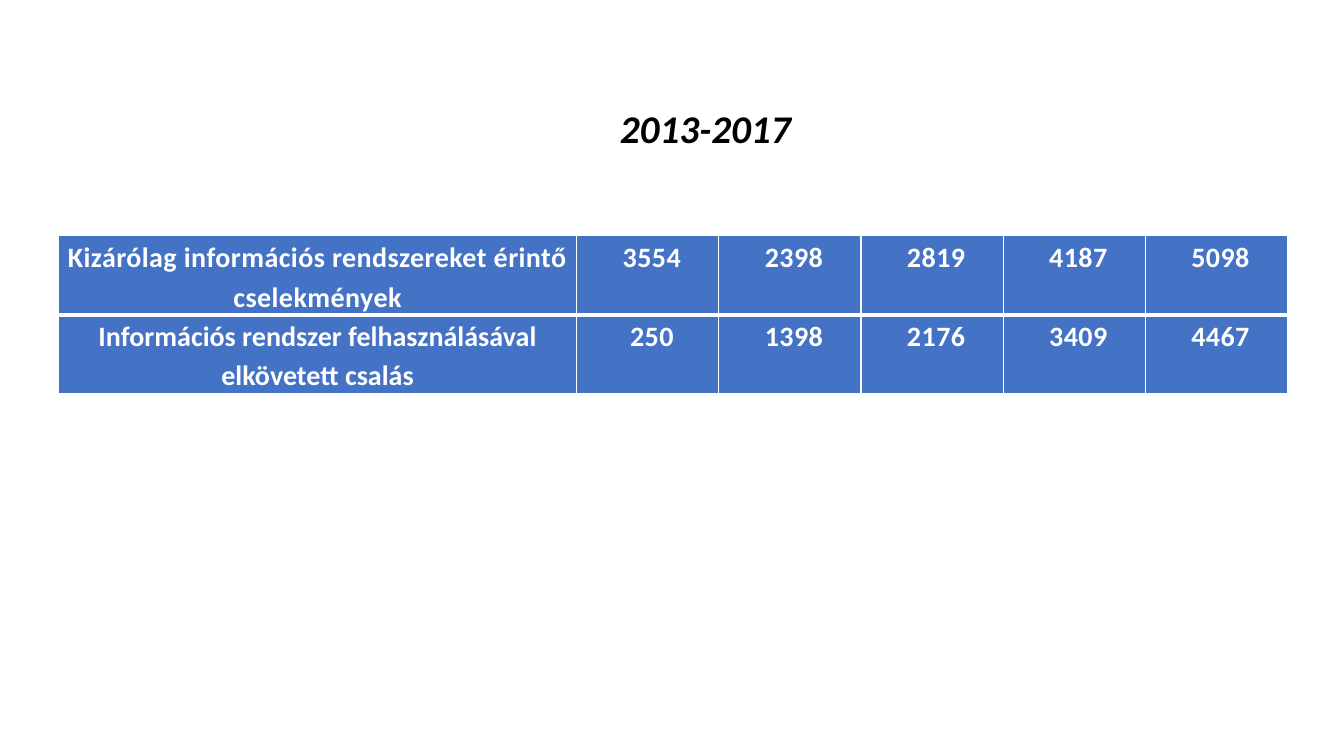
from pptx import Presentation
from pptx.dml.color import RGBColor
from pptx.enum.text import MSO_ANCHOR, MSO_AUTO_SIZE, PP_ALIGN
from pptx.oxml import parse_xml
from pptx.oxml.ns import nsdecls
from pptx.util import Inches, Pt

WHITE = RGBColor(0xFF, 0xFF, 0xFF)
BLACK = RGBColor(0, 0, 0)
BLUE = RGBColor(0x44, 0x72, 0xC4)

COLUMN_WIDTHS = [5.14] + [1.41] * 5
ROW_HEIGHT = 0.76
OFFENCES = [
    ("Kizárólag információs rendszereket érintő cselekmények",
     3554, 2398, 2819, 4187, 5098),
    ("Információs rendszer felhasználásával elkövetett csalás",
     250, 1398, 2176, 3409, 4467),
]


def style_font(paragraph, size, color, italic=False):
    paragraph.alignment = PP_ALIGN.CENTER
    font = paragraph.font
    font.name = "Calibri"
    font.size = Pt(size)
    font.bold = True
    font.italic = italic
    font.color.rgb = color


def add_period_title(slide, text):
    title = slide.shapes.title
    title.left, title.top = Inches(4.34), Inches(0.98)
    title.width, title.height = Inches(5.31), Inches(0.57)
    title.text_frame.text = text
    title.text_frame.auto_size = MSO_AUTO_SIZE.NONE
    title.text_frame.vertical_anchor = MSO_ANCHOR.MIDDLE
    style_font(title.text_frame.paragraphs[0], 28, BLACK, italic=True)


def set_border(cell, side, width):
    cell._tc.get_or_add_tcPr().append(parse_xml(
        f'<a:ln{side} {nsdecls("a")} w="{Pt(width)}"><a:solidFill>'
        f'<a:srgbClr val="{WHITE}"/></a:solidFill></a:ln{side}>'))


def fill_cell(cell, text, top, bottom, indent, spacing):
    # Borders come before the fill in the cell properties
    for side, width in (("L", 1), ("R", 1), ("T", top), ("B", bottom)):
        set_border(cell, side, width)
    cell.fill.solid()
    cell.fill.fore_color.rgb = BLUE
    cell.margin_left = cell.margin_right = Inches(0.07)
    cell.margin_top = cell.margin_bottom = 0

    cell.text = text
    paragraph = cell.text_frame.paragraphs[0]
    style_font(paragraph, 20, WHITE)
    paragraph.line_spacing = 1.15
    paragraph._p.get_or_add_pPr().set("marL", str(Inches(indent)))
    paragraph.runs[0]._r.get_or_add_rPr().set("spc", str(spacing))


def add_offence_table(slide):
    table = slide.shapes.add_table(
        len(OFFENCES), len(COLUMN_WIDTHS), Inches(0.58), Inches(2.34),
        Inches(sum(COLUMN_WIDTHS)), Inches(ROW_HEIGHT * len(OFFENCES))).table
    for column, width in zip(table.columns, COLUMN_WIDTHS):
        column.width = Inches(width)

    for r, offence in enumerate(OFFENCES):
        # A thick rule separates the first row from the second
        top, bottom = (1, 3) if r == 0 else (3, 1)
        for c, value in enumerate(offence):
            indent = 0.08 if c else 0
            spacing = 0 if r and not c else 30
            fill_cell(table.cell(r, c), str(value), top, bottom, indent, spacing)


def main():
    deck = Presentation()
    deck.slide_width, deck.slide_height = Inches(13.33), Inches(7.5)
    slide = deck.slides.add_slide(deck.slide_layouts[5])
    add_offence_table(slide)
    add_period_title(slide, "2013-2017")
    deck.save("out.pptx")


if __name__ == "__main__":
    main()
